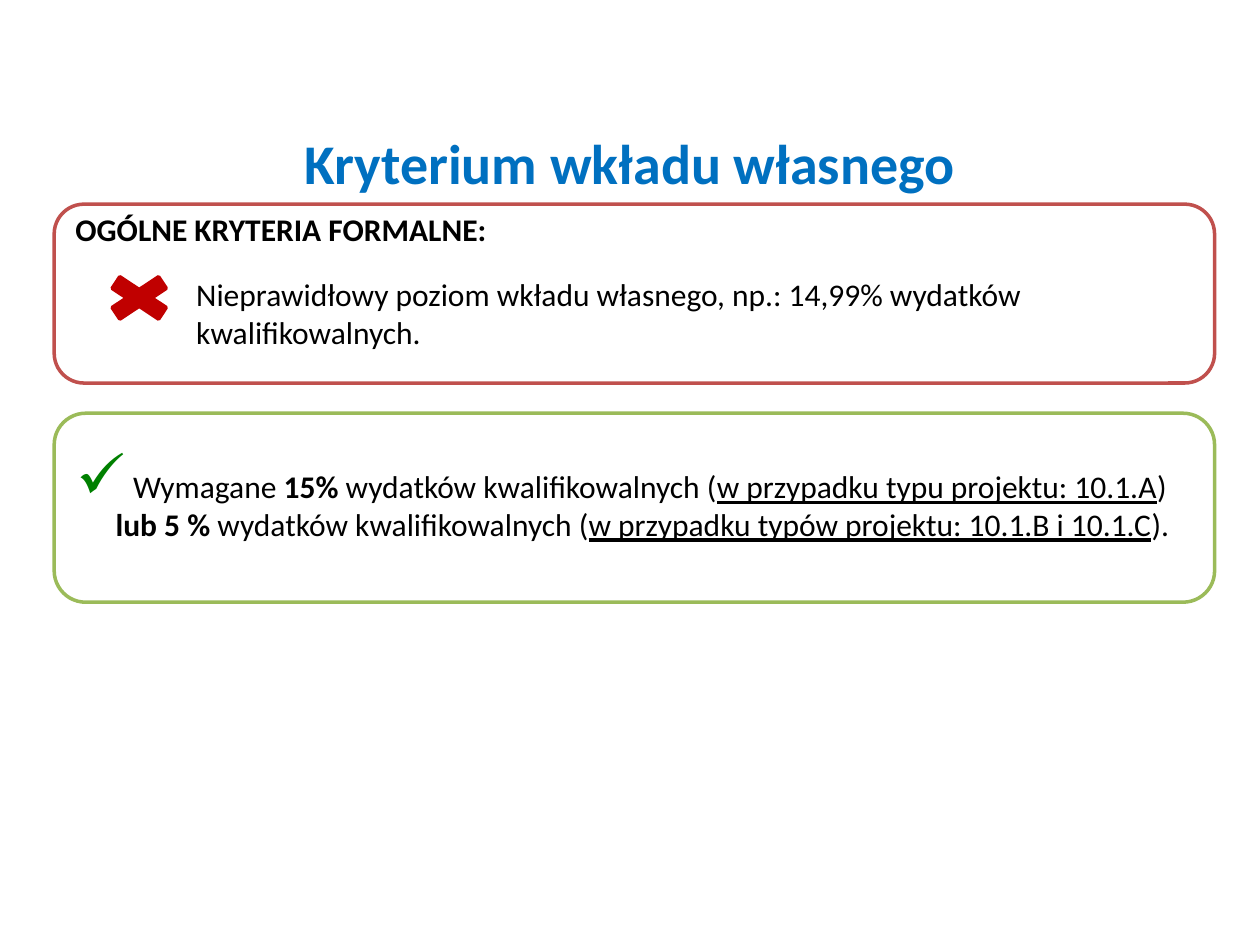
import pptx
import pptx.dml.color
import pptx.enum.shapes
import pptx.enum.text
import pptx.oxml
import pptx.oxml.ns
import pptx.util
from pptx.util import Inches

RGBColor = pptx.dml.color.RGBColor
Shape = pptx.enum.shapes.MSO_SHAPE
Align = pptx.enum.text.PP_ALIGN
Anchor = pptx.enum.text.MSO_ANCHOR

BLUE = RGBColor(0x00, 0x70, 0xC0)
BLACK = RGBColor(0x00, 0x00, 0x00)
RED = RGBColor(0xC0, 0x50, 0x4D)
DARK_RED = RGBColor(0xC0, 0x00, 0x00)
GREEN = RGBColor(0x9B, 0xBB, 0x59)
CHECK_GREEN = RGBColor(0x00, 0x80, 0x00)


class SlideBuilder:
    font = "Calibri"
    line_width = pptx.util.Pt(2)

    def __init__(self, slide):
        self.slide = slide

    def shape(self, kind, at, line, fill=None):
        shape = self.slide.shapes.add_shape(kind, *map(Inches, at))
        shape.shadow.inherit = False
        if fill is None:
            shape.fill.background()
        else:
            shape.fill.solid()
            shape.fill.fore_color.rgb = fill
        shape.line.color.rgb = line
        shape.line.width = self.line_width
        return shape

    def text_box(self, at):
        return self.slide.shapes.add_textbox(*map(Inches, at))

    def add_text(self, box, spans, size=18, color=BLACK, align=Align.LEFT,
                 anchor=Anchor.TOP, top=0.05, bottom=0.05, indent=0, bullet=None):
        """Fill a box with (text, style) spans; style holds "b" and "u" flags."""
        frame = box.text_frame
        frame.word_wrap = True
        frame.vertical_anchor = anchor
        frame.margin_top, frame.margin_bottom = Inches(top), Inches(bottom)
        para = frame.paragraphs[0]
        para.alignment = align
        if indent:
            para._p.get_or_add_pPr().set("marL", str(Inches(indent)))
        if bullet:
            self.bullet(para, bullet, indent)
        for text, style in spans:
            if text == "\n":
                para.add_line_break()
                continue
            span = para.add_run()
            span.text = text
            span.font.name = self.font
            span.font.size = pptx.util.Pt(size)
            span.font.color.rgb = color
            span.font.bold = "b" in style
            span.font.underline = "u" in style

    def bullet(self, para, mark, indent):
        """Hang a green mark at twice the text size."""
        properties = para._p.get_or_add_pPr()
        properties.set("indent", str(-Inches(indent)))
        namespace = pptx.oxml.ns.nsdecls("a")
        for xml in (
            f'<a:buClr {namespace}><a:srgbClr val="{CHECK_GREEN}"/></a:buClr>',
            f'<a:buSzPct {namespace} val="200000"/>',
            f'<a:buChar {namespace} char="{mark}"/>',
        ):
            properties.append(pptx.oxml.parse_xml(xml))


def main():
    deck = pptx.Presentation()
    deck.slide_width, deck.slide_height = Inches(10), Inches(7.5)
    page = SlideBuilder(deck.slides.add_slide(deck.slide_layouts[6]))

    title = page.text_box((0.5, 0.3, 9, 1.25))
    page.add_text(title, [("Kryterium wkładu własnego", "b")], size=32, color=BLUE,
                  align=Align.CENTER, anchor=Anchor.BOTTOM, bottom=0)

    heading = page.text_box((0.5, 1.62, 9, 0.4))
    page.add_text(heading, [("OGÓLNE KRYTERIA FORMALNE:", "b")])

    wrong = page.shape(Shape.ROUNDED_RECTANGLE, (0.43, 1.62, 9.21, 1.42), RED)
    page.add_text(wrong, [
        ("Nieprawidłowy poziom wkładu własnego, np.: 14,99% wydatków", ""),
        ("\n", ""),
        ("kwalifikowalnych.", ""),
    ], anchor=Anchor.MIDDLE, top=0.35, indent=0.96)
    page.shape(Shape.MATH_MULTIPLY, (0.75, 2.13, 0.71, 0.47), DARK_RED, DARK_RED)

    required = page.text_box((0.51, 3.36, 9.06, 1.31))
    page.add_text(required, [
        (" Wymagane ", ""),
        ("15% ", "b"),
        ("wydatków kwalifikowalnych (", ""),
        ("w przypadku typu projektu: 10.1.A", "u"),
        (") ", ""),
        ("lub 5 %", "b"),
        (" wydatków kwalifikowalnych (", ""),
        ("w przypadku typów projektu: 10.1.B i 10.1.C", "u"),
        (").", ""),
    ], top=0.35, indent=0.31, bullet="✓")
    page.shape(Shape.ROUNDED_RECTANGLE, (0.43, 3.28, 9.21, 1.5), GREEN)

    deck.save("out.pptx")


if __name__ == "__main__":
    main()
